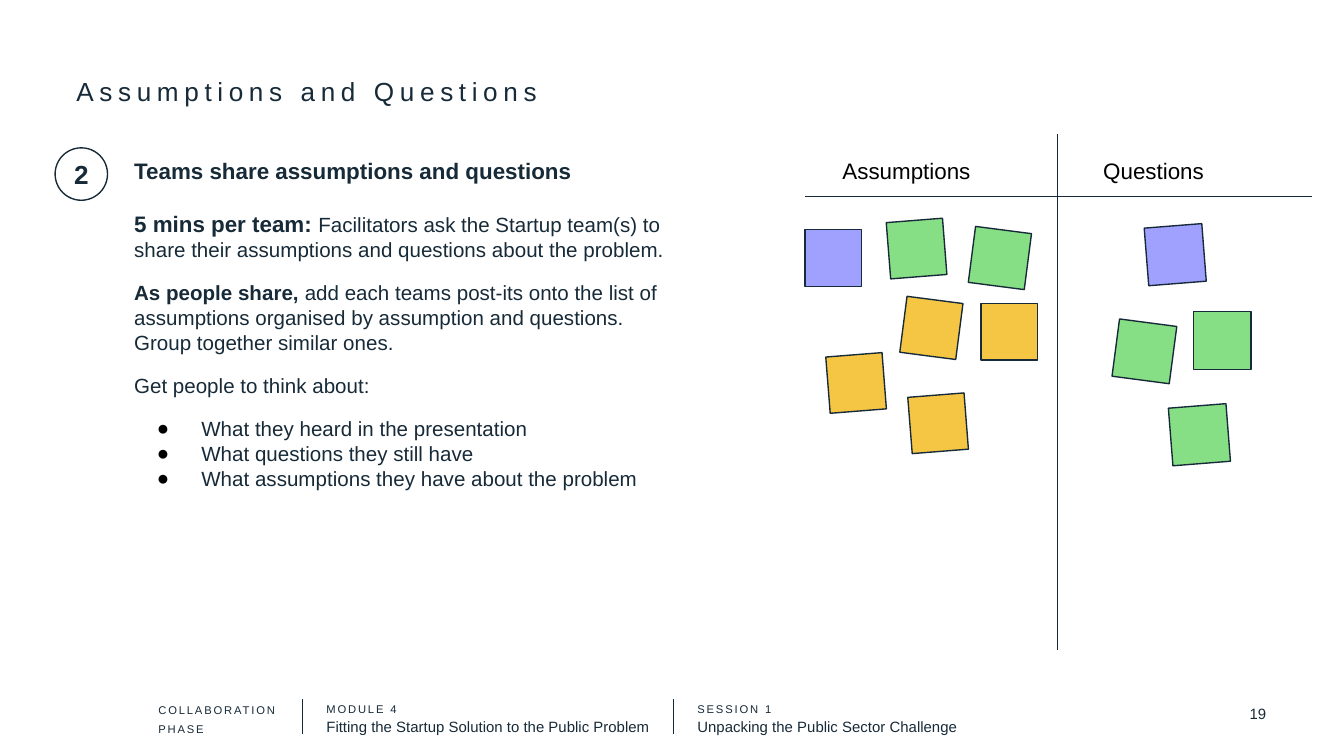
from lxml import etree
from pptx import Presentation
from pptx.dml.color import RGBColor
from pptx.enum.shapes import MSO_CONNECTOR, MSO_SHAPE
from pptx.enum.text import MSO_ANCHOR, PP_ALIGN
from pptx.oxml.ns import qn
from pptx.util import Inches, Pt

INK = RGBColor(0x17, 0x2A, 0x38)
EDGE = RGBColor(0x16, 0x2A, 0x39)
BLACK = RGBColor(0, 0, 0)
LILAC = RGBColor(0xA0, 0xA0, 0xFF)
GREEN = RGBColor(0x87, 0xDF, 0x85)
AMBER = RGBColor(0xF5, 0xC6, 0x44)
RECT, OVAL = MSO_SHAPE.RECTANGLE, MSO_SHAPE.OVAL
LINE = MSO_CONNECTOR.STRAIGHT
TOP, MID = MSO_ANCHOR.TOP, MSO_ANCHOR.MIDDLE
LEFT, MIDDLE, RIGHT = PP_ALIGN.LEFT, PP_ALIGN.CENTER, PP_ALIGN.RIGHT
TILT = 355.5

NOTES = [
    (0.42, [
        (5.99, 1.71, 0, LILAC), (6.61, 1.64, TILT, GREEN),
        (7.23, 1.71, 7.4, GREEN), (6.72, 2.23, 7.4, AMBER),
        (6.16, 2.64, TILT, AMBER), (7.3, 2.26, 0, AMBER),
        (6.77, 2.94, TILT, AMBER)]),
    (0.43, [
        (8.71, 3.02, TILT, GREEN), (8.88, 2.32, 0, GREEN),
        (8.53, 1.68, TILT, LILAC), (8.3, 2.4, 7.5, GREEN)]),
]
BODY = [
    (0, [("Teams share assumptions and questions", 12, True)]),
    (14, [("5 mins per team: ", 12, True),
          ("Facilitators ask the Startup team(s) to share their "
           "assumptions and questions about the problem.", 11, False)]),
    (10, [("As people share, ", 11, True),
          ("add each teams post-its onto the list of assumptions organised "
           "by assumption and questions. Group together similar ones.",
           11, False)]),
    (10, [("Get people to think about:", 11, False)]),
]
POINTS = [
    "What they heard in the presentation",
    "What questions they still have",
    "What assumptions they have about the problem",
]


class Deck:
    """Holds the style and the current slide, and draws each kind of element."""

    font = "Arial"

    def __init__(self, wide):
        self.file = Presentation()
        self.file.slide_width = Inches(wide)
        self.file.slide_height = Inches(wide * 9 / 16)
        self.slide = self.file.slides.add_slide(self.file.slide_layouts[6])

    def style(self, run, size, color=INK, bold=False, track=0):
        run.font.name = self.font
        run.font.size = Pt(size)
        run.font.bold = bold
        run.font.color.rgb = color
        if track:
            run.font._element.set("spc", str(track * 100))

    def frame(self, box, pad=0.1, anchor=TOP):
        text = box.text_frame
        text.word_wrap = True
        text.vertical_anchor = anchor
        text.margin_left = text.margin_right = Inches(pad)
        text.margin_top = text.margin_bottom = Inches(pad)
        return text

    def text(self, at, rows, align=LEFT, anchor=TOP, color=INK, pitch=None):
        box = self.slide.shapes.add_textbox(*map(Inches, at))
        text = self.frame(box, anchor=anchor)
        text.text = "\n".join(row[0] for row in rows)
        for para, (_, size, track) in zip(text.paragraphs, rows):
            para.alignment = align
            if pitch:
                para.line_spacing = Pt(pitch)
            self.style(para.runs[0], size, color, track=track)

    def bullet(self, para):
        props = para._p.get_or_add_pPr()
        props.set("marL", str(Inches(0.5)))
        props.set("indent", str(Inches(-0.33)))
        tint = etree.SubElement(props, qn("a:buClr"))
        etree.SubElement(tint, qn("a:srgbClr")).set("val", str(BLACK))
        etree.SubElement(props, qn("a:buFont")).set("typeface", self.font)
        etree.SubElement(props, qn("a:buChar")).set("char", "●")

    def body(self, at, paras, points):
        text = self.frame(self.slide.shapes.add_textbox(*map(Inches, at)))
        rows = [(gap, runs, False) for gap, runs in paras]
        rows += [(0 if i else 10, [(point, 11, False)], True)
                 for i, point in enumerate(points)]
        for i, (gap, runs, dot) in enumerate(rows):
            para = text.add_paragraph() if i else text.paragraphs[0]
            if dot:
                self.bullet(para)
            if gap:
                para.space_before = Pt(gap)
            for words, size, bold in runs:
                run = para.add_run()
                run.text = words
                self.style(run, size, bold=bold)

    def line(self, start, end, color=EDGE, width=0.75):
        rule = self.slide.shapes.add_connector(
            LINE, *map(Inches, start + end))
        rule.line.color.rgb = color
        rule.line.width = Pt(width)
        etree.SubElement(rule._element.spPr, qn("a:effectLst"))

    def shape(self, kind, at, fill=None, edge=EDGE, turn=0):
        item = self.slide.shapes.add_shape(kind, *map(Inches, at))
        item.shadow.inherit = False
        item.rotation = turn
        if fill is None:
            item.fill.background()
        else:
            item.fill.solid()
            item.fill.fore_color.rgb = fill
        item.line.color.rgb = edge
        item.line.width = Pt(0.75)
        return item

    def badge(self, at, label):
        text = self.frame(self.shape(OVAL, at, edge=INK), 0.06, MID)
        text.text = label
        text.paragraphs[0].alignment = MIDDLE
        self.style(text.paragraphs[0].runs[0], 14, bold=True)


def main():
    deck = Deck(10)
    deck.text((1.08, 5.09, 1.15, 0.47),
              [("COLLABORATION", 6, 1), ("PHASE", 6, 1)], pitch=10.2)
    deck.text((2.33, 5.08, 3.32, 0.47),
              [("MODULE 4", 6, 1),
               ("Fitting the Startup Solution to the Public Problem", 8, 0)],
              pitch=10.6)
    deck.text((5.09, 5.08, 2.99, 0.47),
              [("SESSION 1", 6, 1),
               ("Unpacking the Public Sector Challenge", 8, 0)], pitch=10.6)
    for x in (2.25, 5.01):
        deck.line((x, 5.2), (x, 5.46), INK, 0.5)
    deck.text((8.49, 5.16, 1.03, 0.3), [("19", 8, 0)], RIGHT, MID)

    deck.text((0.47, 0.46, 9.06, 0.77), [("Assumptions and Questions", 14, 3)])
    deck.body((0.9, 1.07, 4.27, 3.84), BODY, POINTS)
    deck.badge((0.41, 1.1, 0.39, 0.39), "2")

    deck.line((5.99, 1.46), (9.76, 1.46))
    deck.line((7.87, 1), (7.87, 4.84))
    for x, head in ((6.17, "Assumptions"), (8.11, "Questions")):
        deck.text((x, 1.07, 1.45, 0.39), [(head, 12, 0)], color=BLACK)
    for side, group in NOTES:
        for x, y, turn, fill in group:
            deck.shape(RECT, (x, y, side, side), fill, turn=turn)
    deck.file.save("out.pptx")


if __name__ == "__main__":
    main()
